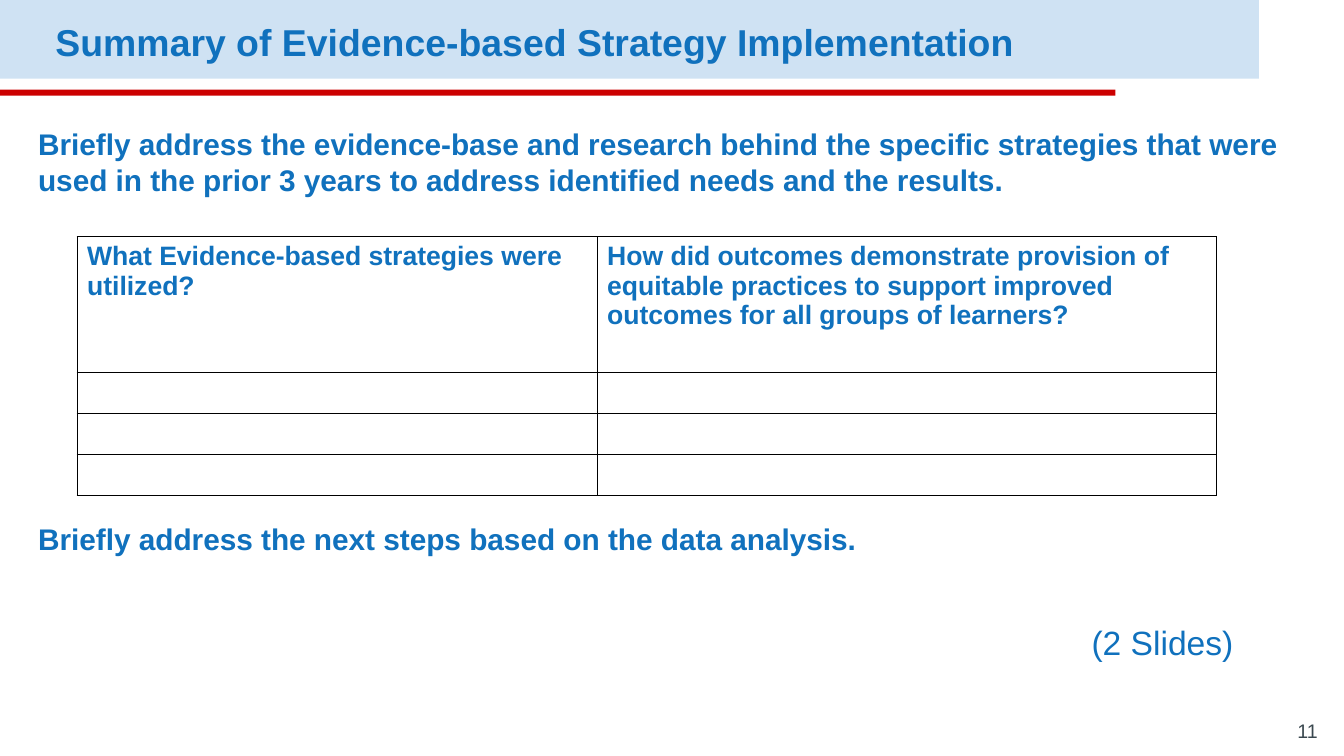
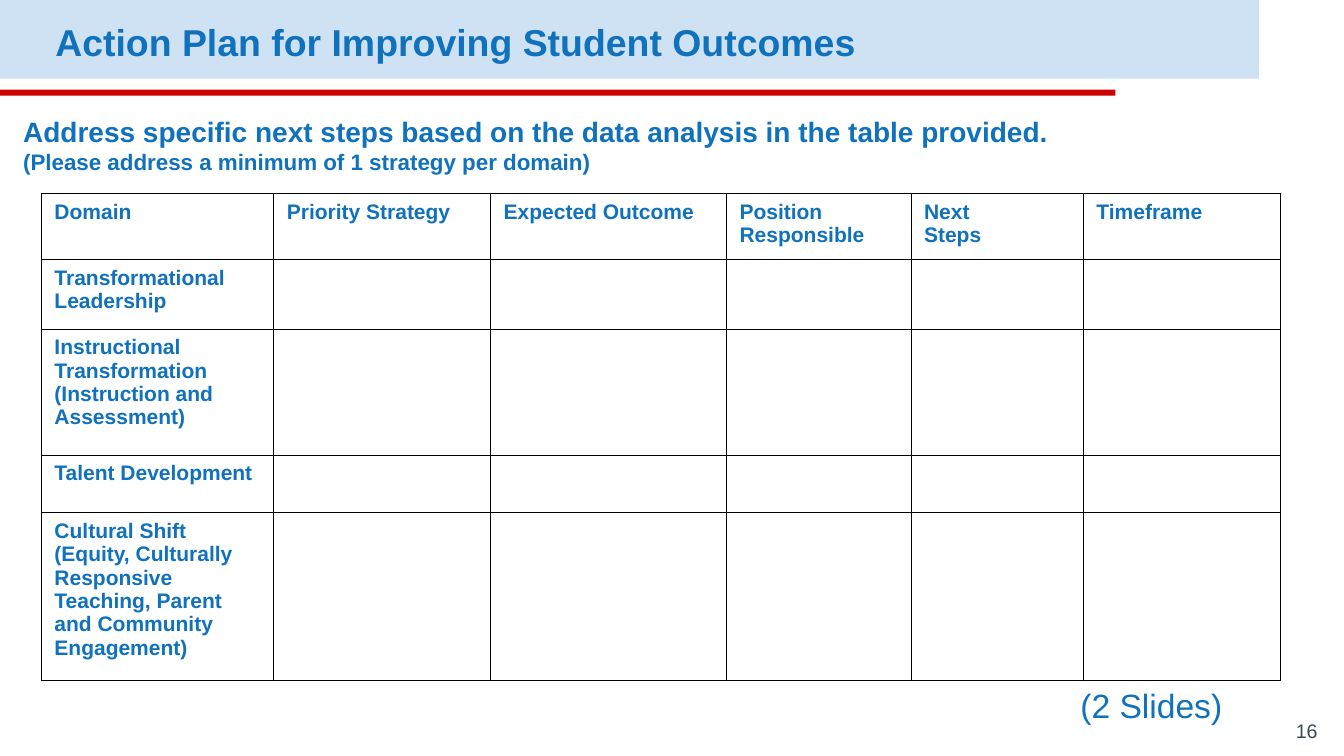
import pptx
import pptx.dml.color
import pptx.enum.shapes
import pptx.enum.text
import pptx.oxml
import pptx.oxml.ns
import pptx.util

BLUE, GREY, BLACK = "1071BD", "3A484F", "000000"
BANDS = [  # box, fill
    ((0, 0, 93.68, 10.4), "CFE2F3"),
    ((0, 11.87, 83, 0.8), "CC0000"),
]
ALIGN = pptx.enum.text.PP_ALIGN
ANCHOR = pptx.enum.text.MSO_ANCHOR
rgb = pptx.dml.color.RGBColor.from_string

prs = pptx.Presentation()
prs.slide_width = pptx.util.Inches(13.333)
prs.slide_height = pptx.util.Inches(7.5)

# Grid: 100 columns by 100 rows
COL, ROW = prs.slide_width / 100, prs.slide_height / 100


def place(x, y, w, h):
    return int(x * COL), int(y * ROW), int(w * COL), int(h * ROW)


def write(tf, lines, color=BLUE, bold=True, align=ALIGN.LEFT, spacing=None):
    tf.word_wrap = True
    for i, (text, size) in enumerate(lines):
        p = tf.add_paragraph() if i else tf.paragraphs[0]
        p.alignment = align
        if spacing:
            p.line_spacing = spacing
        r = p.add_run()
        r.text = text
        r.font.name = "Arial"
        r.font.size = pptx.util.Pt(size)
        r.font.bold = bold
        r.font.color.rgb = rgb(color)


SLIDES = [
    {
        "title": "Summary of Evidence-based Strategy Implementation",
        "number": "11",
        "texts": [
            ((2.1, 16, 94.13, 11),
             [("Briefly address the evidence-base and research behind the specific strategies "
               "that were used in the prior 3 years to address identified needs and the results.",
               21.3)]),
            ((2.1, 68.2, 94.13, 6),
             [("Briefly address the next steps based on the data analysis.", 21.3)]),
        ],
        "note": (80.48, 81.6),
        "origin": (5.73, 31.3),
        "cols": [38.7, 46.05],
        "rows": [18, 5.4, 5.4, 5.4],
        "size": 19,
        "margins": (0.1, 0.05),
        "cells": {
            (0, 0): ["What Evidence-based strategies were utilized?"],
            (0, 1): ["How did outcomes demonstrate provision of equitable practices "
                     "to support improved outcomes for all groups of learners?"],
        },
    },
    {
        "title": "Action Plan for Improving Student Outcomes",
        "number": "16",
        "texts": [
            ((0.98, 14.53, 97.05, 10),
             [("Address specific next steps based on the data analysis in the table provided.", 20),
              ("(Please address a minimum of 1 strategy per domain)", 16)]),
        ],
        "note": (79.65, 90),
        "origin": (3.08, 25.6),
        "cols": [17.3, 16.13, 17.55, 13.73, 12.83, 14.63],
        "rows": [8.67, 9.25, 16.67, 7.6, 22.27],
        "size": 15,
        "margins": (0.13, 0.07),
        "cells": {
            (0, 0): ["Domain"],
            (0, 1): ["Priority Strategy"],
            (0, 2): ["Expected Outcome"],
            (0, 3): ["Position Responsible"],
            (0, 4): ["Next", "Steps"],
            (0, 5): ["Timeframe"],
            (1, 0): ["Transformational", "Leadership"],
            (2, 0): ["Instructional Transformation", "(Instruction and Assessment)"],
            (3, 0): ["Talent Development"],
            (4, 0): ["Cultural Shift (Equity, Culturally Responsive Teaching, "
                     "Parent and Community Engagement)"],
        },
    },
]

for page in SLIDES:
    s = prs.slides.add_slide(prs.slide_layouts[6])

    # Bands
    for box, fill in BANDS:
        sp = s.shapes.add_shape(pptx.enum.shapes.MSO_SHAPE.RECTANGLE, *place(*box))
        sp.shadow.inherit = False
        sp.fill.solid()
        sp.fill.fore_color.rgb = rgb(fill)
        sp.line.fill.background()

    # Title
    tf = s.shapes.add_textbox(*place(3.38, 0.67, 90.3, 8.8)).text_frame
    tf.vertical_anchor = ANCHOR.MIDDLE
    write(tf, [(page["title"], 26.7)], spacing=1.15)

    # Slide number
    tf = s.shapes.add_textbox(*place(92.78, 95.07, 6, 4.53)).text_frame
    tf.vertical_anchor = ANCHOR.BOTTOM
    tf.margin_top = tf.margin_bottom = pptx.util.Inches(0.1)
    write(tf, [(page["number"], 14)], color=GREY, bold=False, align=ALIGN.RIGHT)

    # Instructions and slide-count note
    for box, lines in page["texts"]:
        write(s.shapes.add_textbox(*place(*box)).text_frame, lines)
    tf = s.shapes.add_textbox(*place(*page["note"], 17.48, 7.33)).text_frame
    write(tf, [("(2 Slides)", 24)], bold=False)

    # Table
    cols, rows = page["cols"], page["rows"]
    box = place(*page["origin"], sum(cols), sum(rows))
    tbl = s.shapes.add_table(len(rows), len(cols), *box).table
    tbl.first_row = tbl.horz_banding = False
    for column, width in zip(tbl.columns, cols):
        column.width = int(width * COL)
    for row, height in zip(tbl.rows, rows):
        row.height = int(height * ROW)

    side, top = (pptx.util.Inches(m) for m in page["margins"])
    for i in range(len(rows)):
        for j in range(len(cols)):
            cell = tbl.cell(i, j)
            cell.margin_left = cell.margin_right = side
            cell.margin_top = cell.margin_bottom = top
            # Borders come before the fill in the cell properties
            tcPr = cell._tc.get_or_add_tcPr()
            for edge in ("lnL", "lnR", "lnT", "lnB"):
                tcPr.append(pptx.oxml.parse_xml(
                    f'<a:{edge} {pptx.oxml.ns.nsdecls("a")} w="9525"><a:solidFill>'
                    f'<a:srgbClr val="{BLACK}"/></a:solidFill></a:{edge}>'))
            cell.fill.background()
            if (i, j) in page["cells"]:
                write(cell.text_frame, [(t, page["size"]) for t in page["cells"][i, j]])

prs.save("out.pptx")
